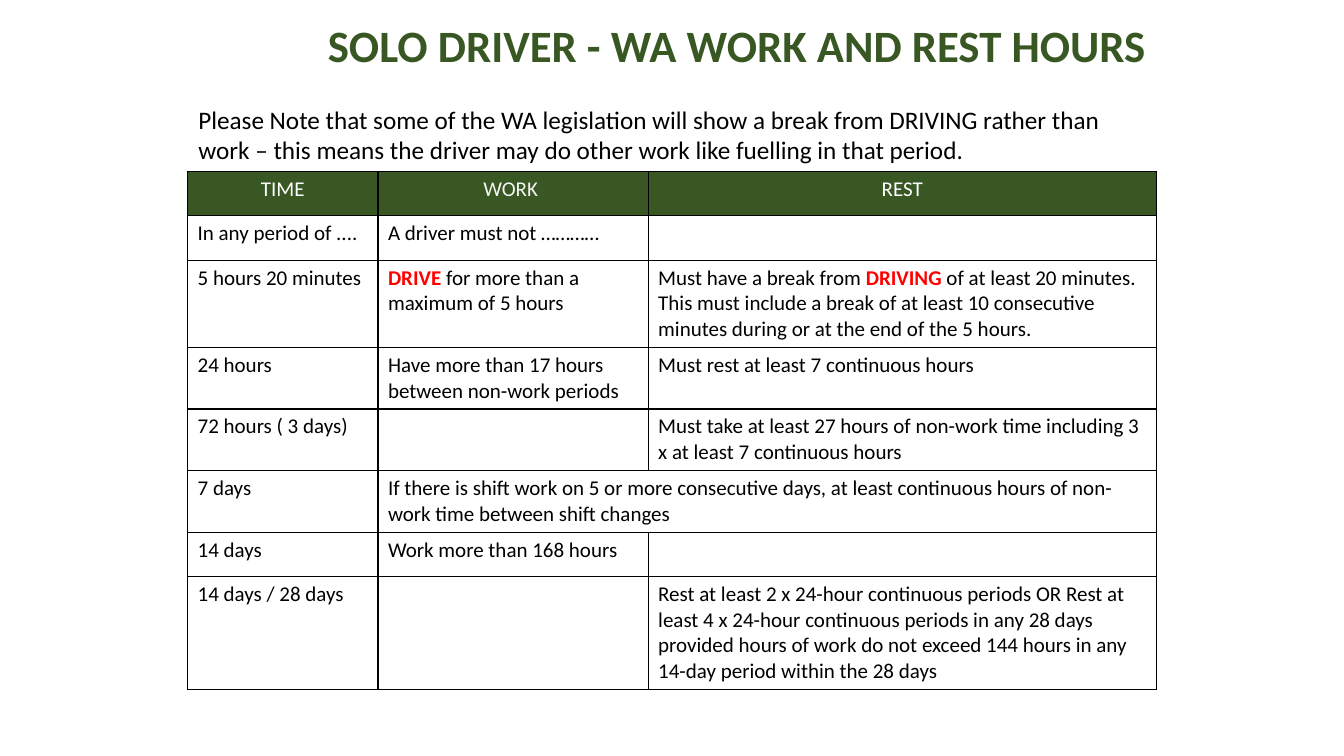
from pptx import Presentation
from pptx.dml.color import RGBColor
from pptx.enum import text as t
from pptx.oxml import parse_xml
from pptx.oxml.ns import nsdecls
from pptx.util import Pt

GREEN, BLACK, WHITE, RED = "385723", "000000", "FFFFFF", "FF0000"

HEAD = [("TIME", WHITE), ("WORK ", "F2F2F2"), ("REST", WHITE)]
# Words between asterisks are stressed.
ROWS = [
    ["In any period of ....", "A driver must not …………", ""],
    ["5 hours 20 minutes", "*DRIVE* for more than a maximum of 5 hours",
     "Must have a break from *DRIVING* of at least 20 minutes. This must include "
     "a break of at least 10 consecutive minutes during or at the end of the 5 hours."],
    ["24 hours", "Have more than 17 hours between non-work periods",
     "Must rest at least 7 continuous hours"],
    ["72 hours ( 3 days)", "",
     "Must take at least 27 hours of non-work time including 3 x at least 7 continuous hours"],
    ["7 days",
     "If there is shift work on 5 or more consecutive days, at least continuous hours "
     "of non-work time between shift changes"],
    ["14 days", "Work more than 168 hours", ""],
    ["14 days / 28 days", "",
     "Rest at least 2 x 24-hour continuous periods OR Rest at least 4 x 24-hour continuous "
     "periods in any 28 days provided hours of work do not exceed 144 hours in any 14-day "
     "period within the 28 days"],
]
WIDTHS = [136, 193, 363]
HEIGHTS = [31.7, 31.7, 62, 44, 44, 44, 31.7, 81]


def color(code):
    return RGBColor.from_string(code)


class Deck:
    """Holds the style and the current slide."""
    font = "Calibri"

    def __init__(self):
        self.prs = Presentation()
        self.prs.slide_width, self.prs.slide_height = Pt(960), Pt(540)
        self.slide = self.prs.slides.add_slide(self.prs.slide_layouts[5])

    def run(self, para, words, size, ink=BLACK, bold=False):
        run = para.add_run()
        run.text = words
        run.font.name, run.font.size, run.font.bold = self.font, Pt(size), bold
        run.font.color.rgb = color(ink)

    def title(self, words, x, y, w, h):
        box = self.slide.shapes.title
        box.left, box.top, box.width, box.height = Pt(x), Pt(y), Pt(w), Pt(h)
        frame = box.text_frame
        frame.auto_size = t.MSO_AUTO_SIZE.NONE
        frame.vertical_anchor = t.MSO_ANCHOR.MIDDLE
        para = frame.paragraphs[0]
        para.alignment, para.line_spacing = t.PP_ALIGN.RIGHT, 0.9
        self.run(para, words, 32, GREEN, True)

    def note(self, words, x, y, w, h):
        frame = self.slide.shapes.add_textbox(Pt(x), Pt(y), Pt(w), Pt(h)).text_frame
        frame.word_wrap = True
        frame.auto_size = t.MSO_AUTO_SIZE.SHAPE_TO_FIT_TEXT
        self.run(frame.paragraphs[0], words, 18)

    def paint(self, cell, fill):
        """Draw thin black borders, then fill the cell."""
        props = cell._tc.get_or_add_tcPr()
        for side in "LRTB":
            props.append(parse_xml(
                f'<a:ln{side} {nsdecls("a")} w="12700"><a:solidFill>'
                f'<a:srgbClr val="{BLACK}"/></a:solidFill></a:ln{side}>'))
        cell.fill.solid()
        cell.fill.fore_color.rgb = color(fill)

    def table(self, head, rows, widths, heights, x, y):
        grid = self.slide.shapes.add_table(
            len(heights), len(widths), Pt(x), Pt(y),
            Pt(sum(widths)), Pt(sum(heights))).table
        grid.first_row = grid.horz_banding = False
        for col, width in zip(grid.columns, widths):
            col.width = Pt(width)
        for row, height in zip(grid.rows, heights):
            row.height = Pt(height)
        for r in range(len(heights)):
            for c in range(len(widths)):
                self.paint(grid.cell(r, c), WHITE if r else GREEN)
        for c, (words, ink) in enumerate(head):
            para = grid.cell(0, c).text_frame.paragraphs[0]
            para.alignment = t.PP_ALIGN.CENTER
            self.run(para, words, 15, ink)
        for r, row in enumerate(rows, 1):
            if len(row) < len(widths):
                grid.cell(r, len(row) - 1).merge(grid.cell(r, len(widths) - 1))
            for c, words in enumerate(row):
                para = grid.cell(r, c).text_frame.paragraphs[0]
                for i, part in enumerate(words.split("*")):
                    if part:
                        bold = i % 2 == 1
                        self.run(para, part, 15, RED if bold else BLACK, bold)


def main():
    deck = Deck()
    deck.title("SOLO DRIVER - WA WORK AND REST HOURS", 168.5, 12.2, 657.5, 44.6)
    deck.table(HEAD, ROWS, WIDTHS, HEIGHTS, 134, 122.4)
    deck.note("Please Note that some of the WA legislation will show a break from DRIVING "
              "rather than work – this means the driver may do other work like fuelling "
              "in that period.", 134.6, 70.6, 682.6, 51)
    deck.prs.save("out.pptx")


if __name__ == "__main__":
    main()
